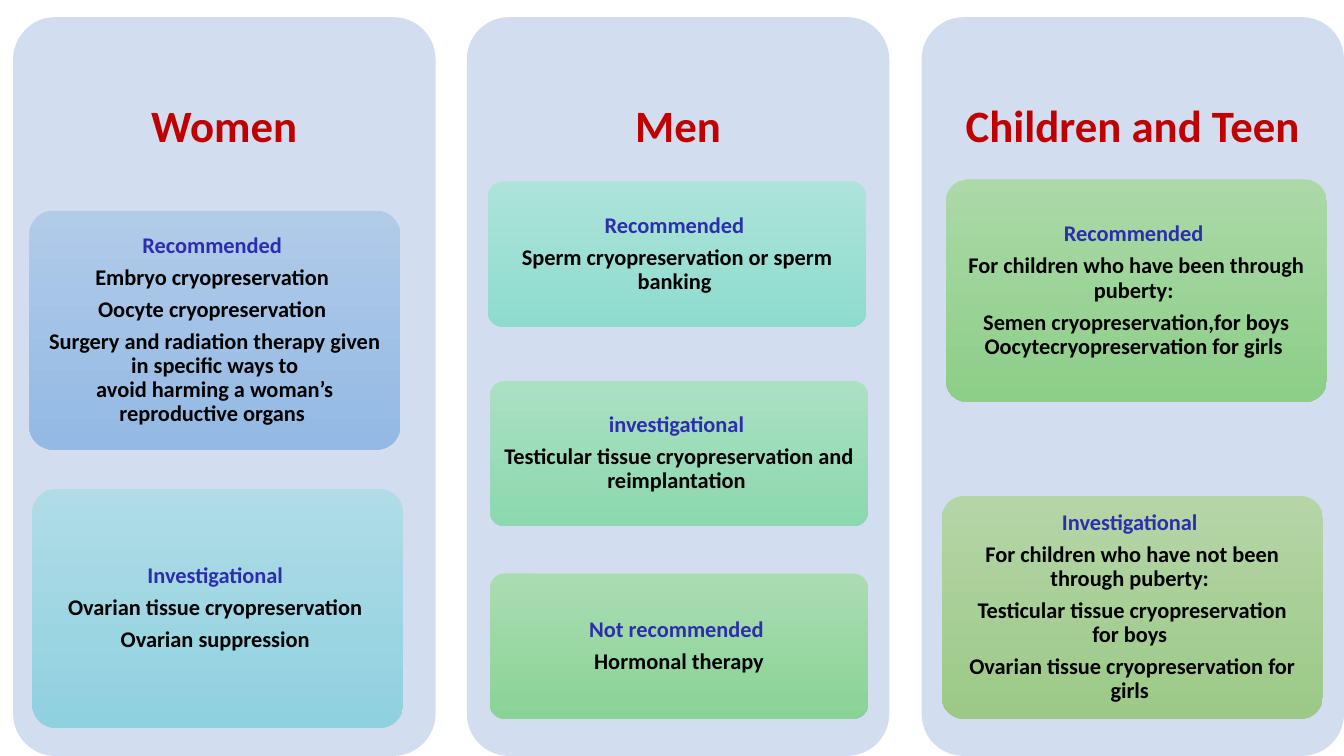
from pptx import Presentation
from pptx import util as u
from pptx.dml.color import RGBColor
from pptx.enum import shapes, text

PX = 9144
PANEL = RGBColor(0xD2, 0xDE, 0xEF)
HEADING = RGBColor(0xC0, 0x00, 0x00)
LABEL = RGBColor(0x2E, 0x2E, 0xAD)
BODY = RGBColor(0x00, 0x00, 0x00)

# column: heading, card width, card height, cards (left, top, gradient, lines)
COLUMNS = [
    ("Women", 368, 237, [
        (29, 209, ("B1CBE9", "93B9E4"), [
            "Recommended",
            "Embryo cryopreservation",
            "Oocyte cryopreservation",
            "Surgery and radiation therapy given in specific ways to\v"
            "avoid harming a woman’s reproductive organs"]),
        (32, 485, ("AFDCE6", "90D1E0"), [
            "Investigational",
            "Ovarian tissue cryopreservation",
            "Ovarian suppression"]),
    ]),
    ("Men", 375, 144, [
        (484, 180, ("ADE3D9", "8EDCCE"), [
            "Recommended",
            "Sperm cryopreservation or sperm banking"]),
        (486, 378, ("ABE0C3", "8CD8AF"), [
            "investigational",
            "Testicular tissue cryopreservation and reimplantation"]),
        (486, 569, ("AADCB2", "8AD396"), [
            "Not recommended",
            " Hormonal therapy"]),
    ]),
    ("Children and Teen", 378, 221, [
        (938, 178, ("ABD9A8", "8DCE88"), [
            "Recommended",
            "For children who have been through puberty:",
            "Semen cryopreservation,for boys Oocytecryopreservation for girls"]),
        (934, 492, ("B5D5A7", "9CC987"), [
            "Investigational",
            "For children who have not been through puberty:",
            "Testicular tissue cryopreservation\vfor boys",
            "Ovarian tissue cryopreservation for girls"]),
    ]),
]

prs = Presentation()
prs.slide_width, prs.slide_height = 1333 * PX, 750 * PX
s = prs.slides.add_slide(prs.slide_layouts[6])


def add_round_rect(x, y, w, h):
    sp = s.shapes.add_shape(shapes.MSO_SHAPE.ROUNDED_RECTANGLE,
                            x * PX, y * PX, w * PX, h * PX)
    sp.adjustments[0] = 0.1
    sp.shadow.inherit = False
    sp.line.fill.background()
    return sp


def write(tf, lines, size, colors, inset_x, inset_y):
    tf.word_wrap = True
    tf.vertical_anchor = text.MSO_ANCHOR.MIDDLE
    tf.margin_left = tf.margin_right = inset_x * PX
    tf.margin_top = tf.margin_bottom = inset_y * PX
    for i, line in enumerate(lines):
        p = tf.paragraphs[0] if i == 0 else tf.add_paragraph()
        p.text = line
        p.alignment = text.PP_ALIGN.CENTER
        p.line_spacing = 0.9
        p.space_after = u.Pt(size * 0.35)
        p.font.name = "Calibri"
        p.font.size = u.Pt(size)
        p.font.bold = True
        p.font.color.rgb = colors[min(i, len(colors) - 1)]


for col, (heading, card_w, card_h, cards) in enumerate(COLUMNS):
    x = 13 + col * 901 // 2
    panel = add_round_rect(x, 17, 419, 733)
    panel.fill.solid()
    panel.fill.fore_color.rgb = PANEL
    tb = s.shapes.add_textbox(x * PX, 17 * PX, 419 * PX, 220 * PX)
    write(tb.text_frame, [heading], 32, [HEADING], 13, 13)

    for left, top, gradient, lines in cards:
        card = add_round_rect(left, top, card_w, card_h)
        card.fill.gradient()
        card.fill.gradient_angle = 270
        for stop, color in zip(card.fill.gradient_stops, gradient):
            stop.color.rgb = RGBColor.from_string(color)
        write(card.text_frame, [line + " " for line in lines], 16, [LABEL, BODY], 4, 3)

prs.save("out.pptx")
